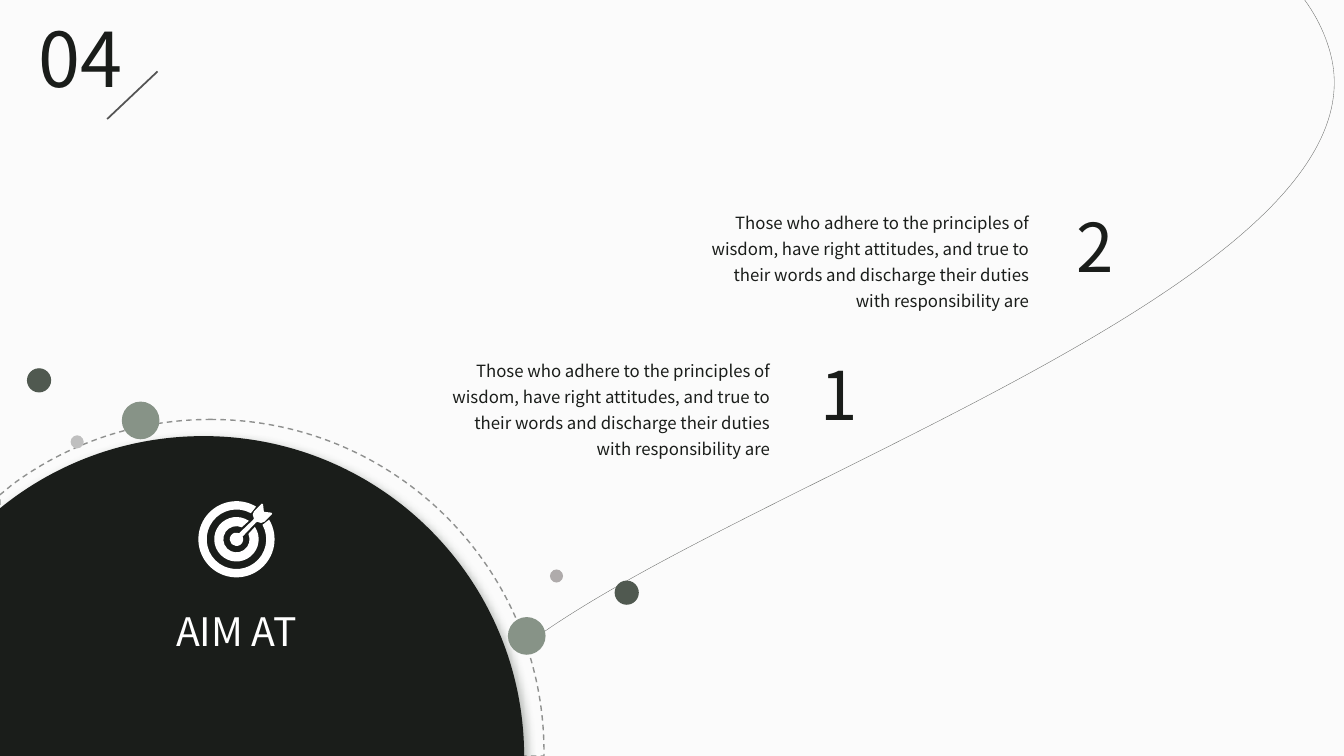
import math

import lxml.etree
import pptx
import pptx.dml.color
import pptx.enum.dml
import pptx.enum.shapes
import pptx.enum.text
import pptx.oxml.ns
import pptx.util

Cm = pptx.util.Cm
Pt = pptx.util.Pt
ALIGN = pptx.enum.text.PP_ALIGN

FONT = "Noto Sans CJK SC"
INK, WHITE, PAPER = "1A1D1A", "FFFFFF", "FBFBFB"
SAGE, MOSS = "879387", "505950"
ADVICE = ("Those who adhere to the principles of wisdom, have right attitudes, "
          "and true to their words and discharge their duties with responsibility are")

# Outlines in cm: M starts, L is a straight step, C is a Bézier step.
SWEEP_TURN = 345
SWEEP = [("M", (5.72, -5.38)),
         ("C", (21.25, -5.38), (33.83, -0.71), (33.83, 5)),
         ("C", (33.83, 10.74), (17.37, 11.56), (10.74, 14.02))]
DASHED_DOME = [("M", (5.31, 10.57)),
               ("C", (9.96, 10.57), (13.71, 14.33), (13.71, 18.95)),
               ("L", (13.71, 19.05), (0, 19.05), (0, 12.47), (0.3, 12.22)),
               ("C", (1.7, 11.18), (3.43, 10.57), (5.31, 10.57))]
DARK_DOME = [("M", (5.13, 10.99)),
             ("C", (9.6, 10.99), (13.21, 14.61), (13.21, 19.07)),
             ("L", (13.21, 19.28), (-0.81, 19.28), (-0.81, 13.59), (-0.61, 13.36)),
             ("C", (0.86, 11.89), (2.9, 10.99), (5.13, 10.99))]

# Left, top, diameter, colour
DOTS = [(3.07, 10.12, 0.95, SAGE), (0.68, 9.28, 0.61, MOSS), (1.78, 10.97, 0.33, "BFBFBF"),
        (12.8, 15.55, 0.95, SAGE), (15.49, 14.63, 0.61, MOSS), (13.86, 14.35, 0.33, "AFABAB")]

SLASH = (3.97, 1.8, 2.7, 3)

# Target: centre, rings as (outer radius, half gap, inner radius, half gap), arrow
TARGET_CENTRE = (5.96, 13.59)
RINGS = [(0.96, 14, 0.75, 16), (0.56, 11, 0.33, 21)]
HUB_RADIUS, HUB_GAP = 0.17, 21
ARROW_HALF = [(0.49, -0.42), (0.52, -0.44), (0.62, -0.41), (0.7, -0.44),
              (0.9, -0.64), (0.88, -0.67), (0.7, -0.69)]

# Text, box in cm, size, colour, alignment, line spacing
TEXTS = [("04", (0.71, 0.18, 2.9, 2.57), 54, INK, ALIGN.JUSTIFY, None),
         ("AIM AT", (3.33, 15.19, 5.26, 1.45), 28, WHITE, ALIGN.CENTER, None),
         (ADVICE, (17.68, 5.08, 8.51, 2.92), 12, INK, ALIGN.RIGHT, 1.3),
         ("2", (26.34, 5.05, 2.54, 2.31), 48, INK, ALIGN.CENTER, None),
         (ADVICE, (11.15, 8.81, 8.51, 2.92), 12, INK, ALIGN.RIGHT, 1.3),
         ("1", (19.89, 8.79, 2.54, 2.31), 48, INK, ALIGN.CENTER, None)]


def colour(code):
    return pptx.dml.color.RGBColor.from_string(code)


def apply(target, values):
    for name, value in values.items():
        setattr(target, name, value)


def node(parent, tag, **attributes):
    return lxml.etree.SubElement(parent, pptx.oxml.ns.qn(tag), attributes)


def paint(shape, fill=None, line=None, width=1, opacity=100, dash=None):
    shape.shadow.inherit = False
    if fill:
        shape.fill.solid()
        shape.fill.fore_color.rgb = colour(fill)
    else:
        shape.fill.background()
    if not line:
        shape.line.fill.background()
        return
    shape.line.color.rgb = colour(line)
    apply(shape.line, {"width": Pt(width), "dash_style": dash})
    tint = shape.element.spPr.xpath("./a:ln/a:solidFill/a:srgbClr")[0]
    node(tint, "a:alpha", val=str(opacity * 1000))


def draw_outline(page, contours, closed=True):
    """Draw contours as one freeform, turning each C step into a cubic curve."""
    builder = None
    for contour in contours:
        points = [(Cm(x), Cm(y)) for step in contour for x, y in step[1:]]
        if builder is None:
            builder = page.shapes.build_freeform(*points[0], scale=1.0)
        else:
            builder.move_to(*points[0])
        builder.add_line_segments(points[1:], close=closed)
    shape = builder.convert_to_shape()
    segments = iter(shape.element.xpath(".//a:moveTo | .//a:lnTo"))
    for contour in contours:
        for kind, *points in contour:
            used = [next(segments) for _ in points]
            if kind == "C":
                curve = lxml.etree.Element(pptx.oxml.ns.qn("a:cubicBezTo"))
                used[0].addprevious(curve)
                for segment in used:
                    curve.append(segment[0])
                    segment.getparent().remove(segment)
    return shape


def arc(radius, gap, backwards=False):
    """Start point and C steps round the target, open towards the upper right."""
    left, top = TARGET_CENTRE
    count = 4
    turn = math.radians(360 - 2 * gap) / count
    pull = 4 / 3 * math.tan(turn / 4)
    points = []
    for i in range(count + 1):
        angle = math.radians(45 + gap) + turn * i
        x, y = radius * math.cos(angle), -radius * math.sin(angle)
        points += [(left + x + side * pull * y, top + y - side * pull * x)
                   for side in (-1, 0, 1)]
    points = points[1:-1]
    if backwards:
        points.reverse()
    return points[0], [("C", *points[i:i + 3]) for i in range(1, len(points), 3)]


def target_contours():
    contours = []
    for outer, outer_gap, inner, inner_gap in RINGS:
        start, rim = arc(outer, outer_gap)
        turn_back, hole = arc(inner, inner_gap, backwards=True)
        contours.append([("M", start), *rim, ("L", turn_back), *hole])
    start, hub = arc(HUB_RADIUS, HUB_GAP)
    arrow = ARROW_HALF + [(-y, -x) for x, y in reversed(ARROW_HALF)]
    left, top = TARGET_CENTRE
    contours.append([("M", start), *hub, ("L", *[(left + x, top + y) for x, y in arrow])])
    return contours


def add_glow(shape):
    effects = shape.element.spPr.find(pptx.oxml.ns.qn("a:effectLst"))
    shadow = node(effects, "a:outerShdw", blurRad=str(Pt(6)), dist=str(Pt(3)),
                  dir=str(45 * 60000), algn="tl", rotWithShape="0")
    node(node(shadow, "a:srgbClr", val=MOSS), "a:alpha", val="40000")


def add_text(page, text, box, size, ink, align, spacing):
    frame = page.shapes.add_textbox(*map(Cm, box)).text_frame
    apply(frame, {"word_wrap": True,
                  "auto_size": pptx.enum.text.MSO_AUTO_SIZE.SHAPE_TO_FIT_TEXT})
    para = frame.paragraphs[0]
    apply(para, {"alignment": align, "line_spacing": spacing})
    span = para.add_run()
    span.text = text
    apply(span.font, {"name": FONT, "size": Pt(size)})
    span.font.color.rgb = colour(ink)


def main():
    deck = pptx.Presentation()
    apply(deck, {"slide_width": Cm(33.87), "slide_height": Cm(19.05)})
    page = deck.slides.add_slide(deck.slide_layouts[6])
    page.background.fill.solid()
    page.background.fill.fore_color.rgb = colour(PAPER)

    sweep = draw_outline(page, [SWEEP], closed=False)
    sweep.rotation = SWEEP_TURN
    paint(sweep, line=INK, width=0.25, opacity=64)
    paint(draw_outline(page, [DASHED_DOME]), line=INK, opacity=48,
          dash=pptx.enum.dml.MSO_LINE.DASH)
    dome = draw_outline(page, [DARK_DOME])
    paint(dome, fill=INK)
    add_glow(dome)

    for left, top, size, fill in DOTS:
        dot = page.shapes.add_shape(pptx.enum.shapes.MSO_SHAPE.OVAL,
                                    Cm(left), Cm(top), Cm(size), Cm(size))
        paint(dot, fill=fill)

    slash = page.shapes.add_connector(pptx.enum.shapes.MSO_CONNECTOR.STRAIGHT,
                                      *map(Cm, SLASH))
    slash.line.color.rgb = colour("545454")
    slash.line.width = Pt(1.25)
    node(slash.element.spPr, "a:effectLst")

    for entry in TEXTS:
        add_text(page, *entry)
    paint(draw_outline(page, target_contours()), fill=WHITE)
    deck.save("out.pptx")


if __name__ == "__main__":
    main()
